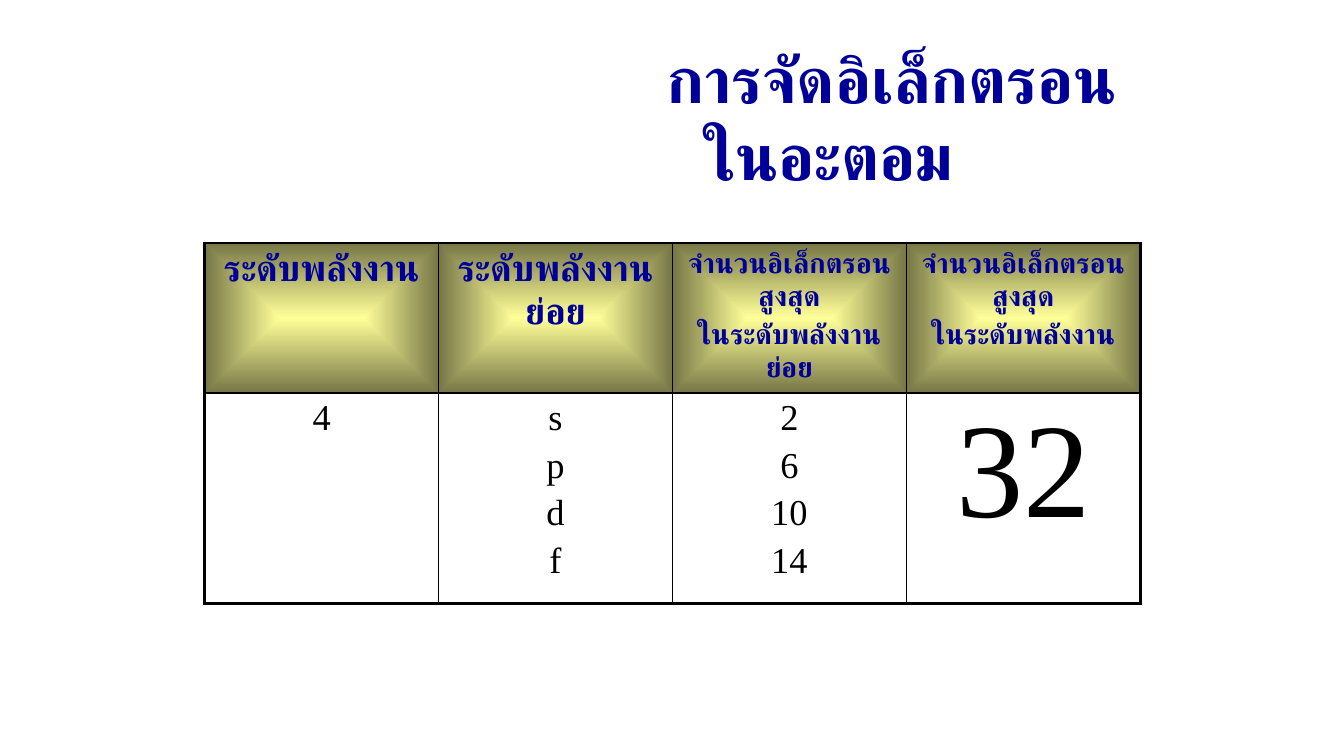
from dataclasses import dataclass

from lxml.etree import SubElement
from pptx import Presentation
from pptx.dml.color import RGBColor
from pptx.enum.lang import MSO_LANGUAGE_ID
from pptx.enum.text import PP_ALIGN
from pptx.oxml.ns import qn
from pptx.slide import Slide
from pptx.table import _Cell
from pptx.text.text import _Paragraph
from pptx.util import Inches, Pt


@dataclass(frozen=True)
class TextStyle:
    """Look of a piece of text."""

    size: int
    font: str
    color: str
    bold: bool = False


@dataclass(frozen=True)
class CellContent:
    """Lines of one table cell and their style."""

    lines: tuple[str, ...]
    style: TextStyle


@dataclass(frozen=True)
class Theme:
    """Colours, line widths and text styles of the slide."""

    border: str = "000000"
    gradient_center: str = "FFFF99"
    gradient_edge: str = "767647"
    outer_line: float = 2.25
    inner_line: float = 1
    title: TextStyle = TextStyle(46, "Arial", "000099", True)
    header: TextStyle = TextStyle(26, "DejaVu Sans", "000099", True)
    small_header: TextStyle = TextStyle(20, "DejaVu Sans", "000099", True)
    body: TextStyle = TextStyle(26, "Times New Roman", "000000")
    total: TextStyle = TextStyle(96, "Times New Roman", "000000")


THEME = Theme()
TITLE = "การจัดอิเล็กตรอนในอะตอม"
COLUMN_WIDTH = 2.32
ROW_HEIGHTS = (1.49, 2.09)
ROWS = (
    (
        CellContent(("ระดับพลังงาน",), THEME.header),
        CellContent(("ระดับพลังงานย่อย",), THEME.header),
        CellContent(("จำนวนอิเล็กตรอนสูงสุด", "ในระดับพลังงานย่อย"), THEME.small_header),
        CellContent(("จำนวนอิเล็กตรอนสูงสุด", "ในระดับพลังงาน"), THEME.small_header),
    ),
    (
        CellContent(("4",), THEME.body),
        CellContent(("s", "p", "d", "f"), THEME.body),
        CellContent(("2", "6", "10", "14"), THEME.body),
        CellContent(("32",), THEME.total),
    ),
)


def format_paragraph(paragraph: _Paragraph, style: TextStyle) -> None:
    """Apply a text style and proportional space before."""
    properties = paragraph._p.get_or_add_pPr()
    spacing = SubElement(properties, qn("a:spcBef"))
    SubElement(spacing, qn("a:spcPct"), val="20000")
    for run in paragraph.runs:
        run.font.size = Pt(style.size)
        run.font.bold = style.bold
        run.font.name = style.font
        run.font.color.rgb = RGBColor.from_string(style.color)
        run.font.language_id = MSO_LANGUAGE_ID.THAI
        SubElement(run._r.get_or_add_rPr(), qn("a:cs"), typeface=style.font)


def add_title(slide: Slide) -> None:
    """Add the title with a hanging indent."""
    box = slide.shapes.add_textbox(Inches(6.51), Inches(0.34), Inches(5.04), Inches(0.89))
    box.text_frame.word_wrap = True
    box.text_frame.text = TITLE
    paragraph = box.text_frame.paragraphs[0]
    properties = paragraph._p.get_or_add_pPr()
    properties.set("marL", str(Inches(0.38)))
    properties.set("indent", str(-Inches(0.38)))
    format_paragraph(paragraph, THEME.title)


def draw_borders(cell: _Cell, outer_sides: dict[str, bool]) -> None:
    """Draw thick lines on outer sides and thin lines on inner ones."""
    properties = cell._tc.get_or_add_tcPr()
    for side, is_outer in outer_sides.items():
        width = THEME.outer_line if is_outer else THEME.inner_line
        line = SubElement(properties, qn(f"a:ln{side}"), w=str(Pt(width)))
        fill = SubElement(line, qn("a:solidFill"))
        SubElement(fill, qn("a:srgbClr"), val=THEME.border)


def fill_header(cell: _Cell) -> None:
    """Fill a header cell with a gradient from its centre."""
    gradient = SubElement(cell._tc.get_or_add_tcPr(), qn("a:gradFill"))
    stops = SubElement(gradient, qn("a:gsLst"))
    for position, color in (("0", THEME.gradient_center), ("100000", THEME.gradient_edge)):
        stop = SubElement(stops, qn("a:gs"), pos=position)
        SubElement(stop, qn("a:srgbClr"), val=color)
    shade = SubElement(gradient, qn("a:path"), path="rect")
    SubElement(shade, qn("a:fillToRect"), dict.fromkeys("ltrb", "50000"))


def write_cell(cell: _Cell, content: CellContent) -> None:
    """Write centred lines into a cell."""
    cell.text_frame.text = "\n".join(content.lines)
    for paragraph in cell.text_frame.paragraphs:
        paragraph.alignment = PP_ALIGN.CENTER
        format_paragraph(paragraph, content.style)


def add_energy_table(slide: Slide) -> None:
    """Add the table of energy levels."""
    row_count, column_count = len(ROWS), len(ROWS[0])
    frame = slide.shapes.add_table(
        row_count, column_count, Inches(2.03), Inches(2.41),
        Inches(COLUMN_WIDTH * column_count), Inches(sum(ROW_HEIGHTS)),
    )
    table = frame.table
    table.first_row = False
    table.horz_banding = False
    for column in table.columns:
        column.width = Inches(COLUMN_WIDTH)
    for row_index, contents in enumerate(ROWS):
        table.rows[row_index].height = Inches(ROW_HEIGHTS[row_index])
        for column_index, content in enumerate(contents):
            cell = table.cell(row_index, column_index)
            write_cell(cell, content)
            draw_borders(cell, {
                "L": column_index == 0,
                "R": column_index == column_count - 1,
                "T": row_index == 0,
                "B": row_index == row_count - 1,
            })
            if row_index == 0:
                fill_header(cell)
            else:
                cell.fill.background()


def main() -> None:
    """Build and save the presentation."""
    presentation = Presentation()
    presentation.slide_width = Inches(13.33)
    presentation.slide_height = Inches(7.5)
    slide = presentation.slides.add_slide(presentation.slide_layouts[6])
    add_title(slide)
    add_energy_table(slide)
    presentation.save("out.pptx")


if __name__ == "__main__":
    main()
